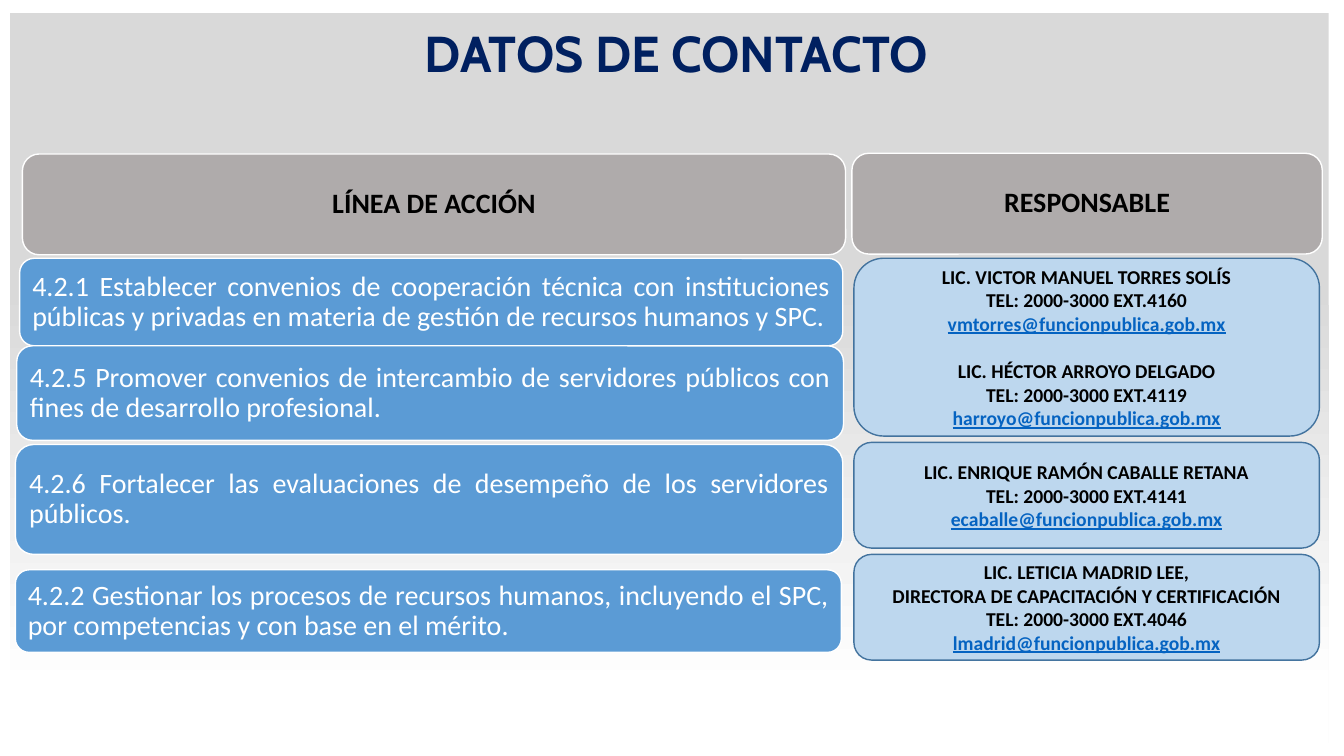
from pptx import Presentation
from pptx.dml.color import RGBColor
from pptx.enum.shapes import MSO_SHAPE as Form
from pptx.enum.text import MSO_ANCHOR as Anchor, PP_ALIGN as Align
from pptx.util import Pt

NAVY, BLUE, PALE, EDGE = "002060", "5B9BD5", "BDD7EE", "43739E"
GRAY, SILVER, WHITE, BLACK, LINK = "AFABAB", "D9D9D9", "FFFFFF", "000000", "0563C1"

HEADS = [
    ("LÍNEA DE ACCIÓN", (16, 110, 588, 72)),
    ("RESPONSABLE", (608.5, 109.5, 336, 72)),
]
ACTIONS = [
    ("4.2.1 Establecer convenios de cooperación técnica con instituciones "
     "públicas y privadas en materia de gestión de recursos humanos y SPC.",
     (14, 184.5, 588, 62.5)),
    ("4.2.5 Promover convenios de intercambio de servidores públicos con "
     "fines de desarrollo profesional.", (12, 247, 590.5, 67.5)),
    ("4.2.6 Fortalecer las evaluaciones de desempeño de los servidores "
     "públicos.", (11, 317.5, 591, 78.5)),
    ("4.2.2 Gestionar los procesos de recursos humanos, incluyendo el SPC, "
     "por competencias y con base en el mérito.", (11, 407, 590, 59)),
]
# Each card: top, height and its people, each a list of lines.
CARDS = [
    (184.5, 127, [
        ["LIC. VICTOR MANUEL TORRES SOLÍS", "TEL: 2000-3000 EXT.4160",
         "vmtorres@funcionpublica.gob.mx"],
        ["LIC. HÉCTOR ARROYO DELGADO", "TEL: 2000-3000 EXT.4119",
         "harroyo@funcionpublica.gob.mx"]]),
    (316, 75.5, [
        ["LIC. ENRIQUE RAMÓN CABALLE RETANA", "TEL: 2000-3000 EXT.4141",
         "ecaballe@funcionpublica.gob.mx"]]),
    (396, 75.5, [
        ["LIC. LETICIA MADRID LEE,",
         "DIRECTORA DE CAPACITACIÓN Y CERTIFICACIÓN",
         "TEL: 2000-3000 EXT.4046", "lmadrid@funcionpublica.gob.mx"]]),
]


def rgb(code):
    return RGBColor.from_string(code)


def assign(item, values):
    for name, value in values.items():
        setattr(item, name, value)


def set_frame(frame, side=7.2, edge=3.6):
    assign(frame, dict(word_wrap=True, vertical_anchor=Anchor.MIDDLE,
                       margin_left=Pt(side), margin_right=Pt(side),
                       margin_top=Pt(edge), margin_bottom=Pt(edge)))


def write(para, text, color, font, **form):
    """Fill a paragraph with one run; form holds paragraph settings."""
    run = para.add_run()
    run.text = text
    assign(run.font, font)
    run.font.color.rgb = rgb(color)
    assign(para, form)


def add_backdrop(slide):
    panel = slide.shapes.add_shape(Form.RECTANGLE, Pt(7), Pt(9.5), Pt(942), Pt(521))
    panel.shadow.inherit = False
    panel.line.fill.background()
    panel.fill.gradient()
    panel.fill.gradient_angle = 270
    stops = panel.fill.gradient_stops
    for stop, color, place in zip(stops, (SILVER, WHITE), (0.37, 0.93)):
        stop.color.rgb = rgb(color)
        stop.position = place


def add_title(slide, text):
    box = slide.shapes.add_textbox(Pt(80), Pt(17), Pt(806), Pt(46))
    set_frame(box.text_frame)
    write(box.text_frame.paragraphs[0], text, NAVY,
          dict(name="Cabin", size=Pt(36), bold=True),
          alignment=Align.CENTER, line_spacing=0.9)


def add_round(slide, place, fill, line):
    shape = slide.shapes.add_shape(Form.ROUNDED_RECTANGLE, *map(Pt, place))
    shape.shadow.inherit = False
    shape.fill.solid()
    shape.fill.fore_color.rgb = rgb(fill)
    shape.line.color.rgb = rgb(line)
    shape.line.width = Pt(1)
    return shape.text_frame


def add_label(slide, text, place, fill, color, bold, align):
    frame = add_round(slide, place, fill, WHITE)
    set_frame(frame, 6, 6)
    write(frame.paragraphs[0], text, color,
          dict(name="Calibri", size=Pt(20), bold=bold),
          alignment=align, line_spacing=0.9)


def add_card(slide, top, height, people):
    frame = add_round(slide, (610, top, 332.5, height), PALE, EDGE)
    set_frame(frame)
    para = frame.paragraphs[0]
    for rank, person in enumerate(people):
        for row, text in enumerate(person):
            if rank or row:
                para = frame.add_paragraph()
            mail = "@" in text
            gap = 17 if rank and not row else 0
            write(para, text, LINK if mail else BLACK,
                  dict(name="Calibri", size=Pt(14), bold=True, underline=mail),
                  alignment=Align.CENTER, space_before=Pt(gap))


def main():
    deck = Presentation()
    assign(deck, dict(slide_width=Pt(960), slide_height=Pt(540)))
    slide = deck.slides.add_slide(deck.slide_layouts[6])
    add_backdrop(slide)
    add_title(slide, "DATOS DE CONTACTO")
    for text, place in HEADS:
        add_label(slide, text, place, GRAY, BLACK, True, Align.CENTER)
    for text, place in ACTIONS:
        add_label(slide, text, place, BLUE, WHITE, False, Align.JUSTIFY)
    for card in CARDS:
        add_card(slide, *card)
    deck.save("out.pptx")


if __name__ == "__main__":
    main()
